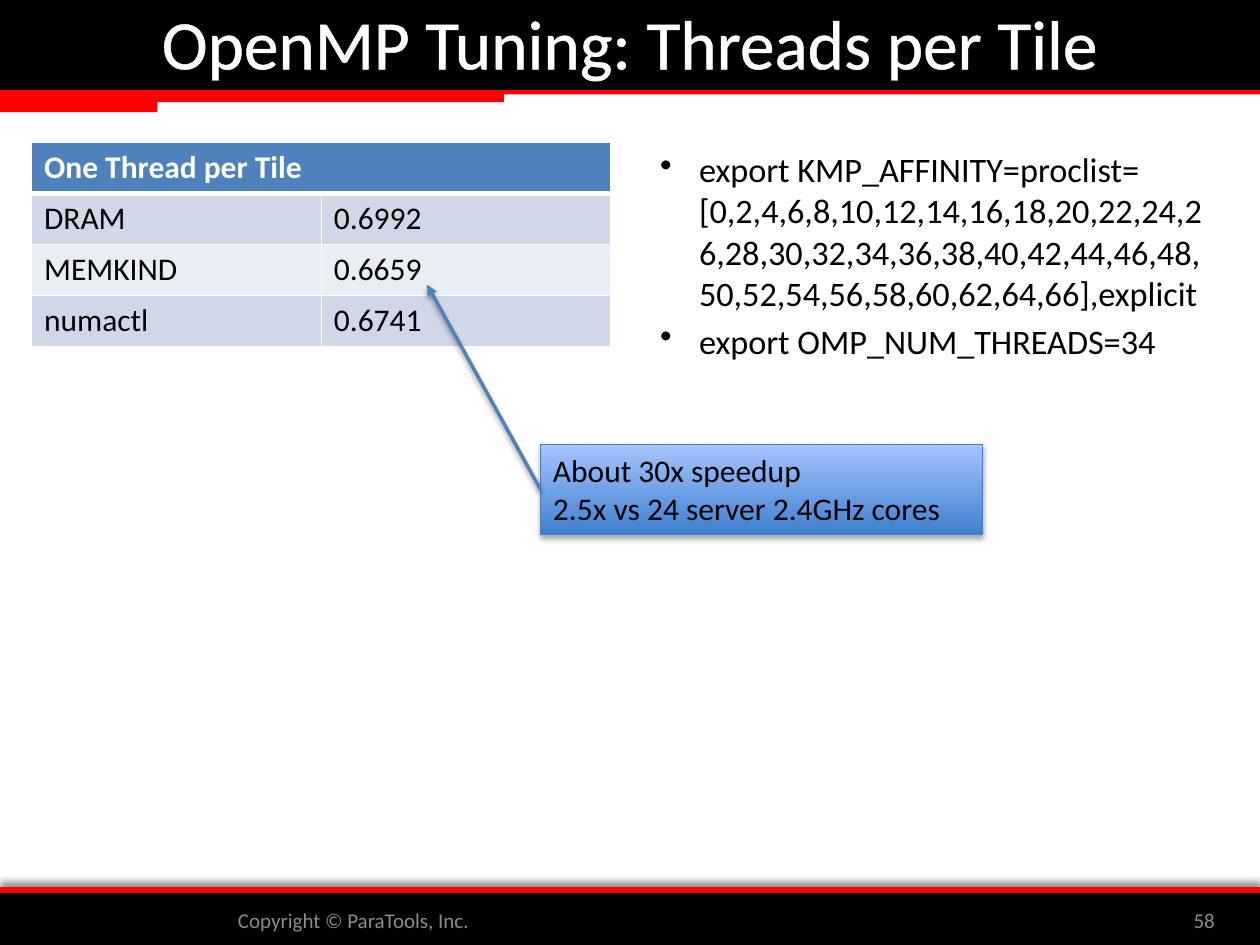
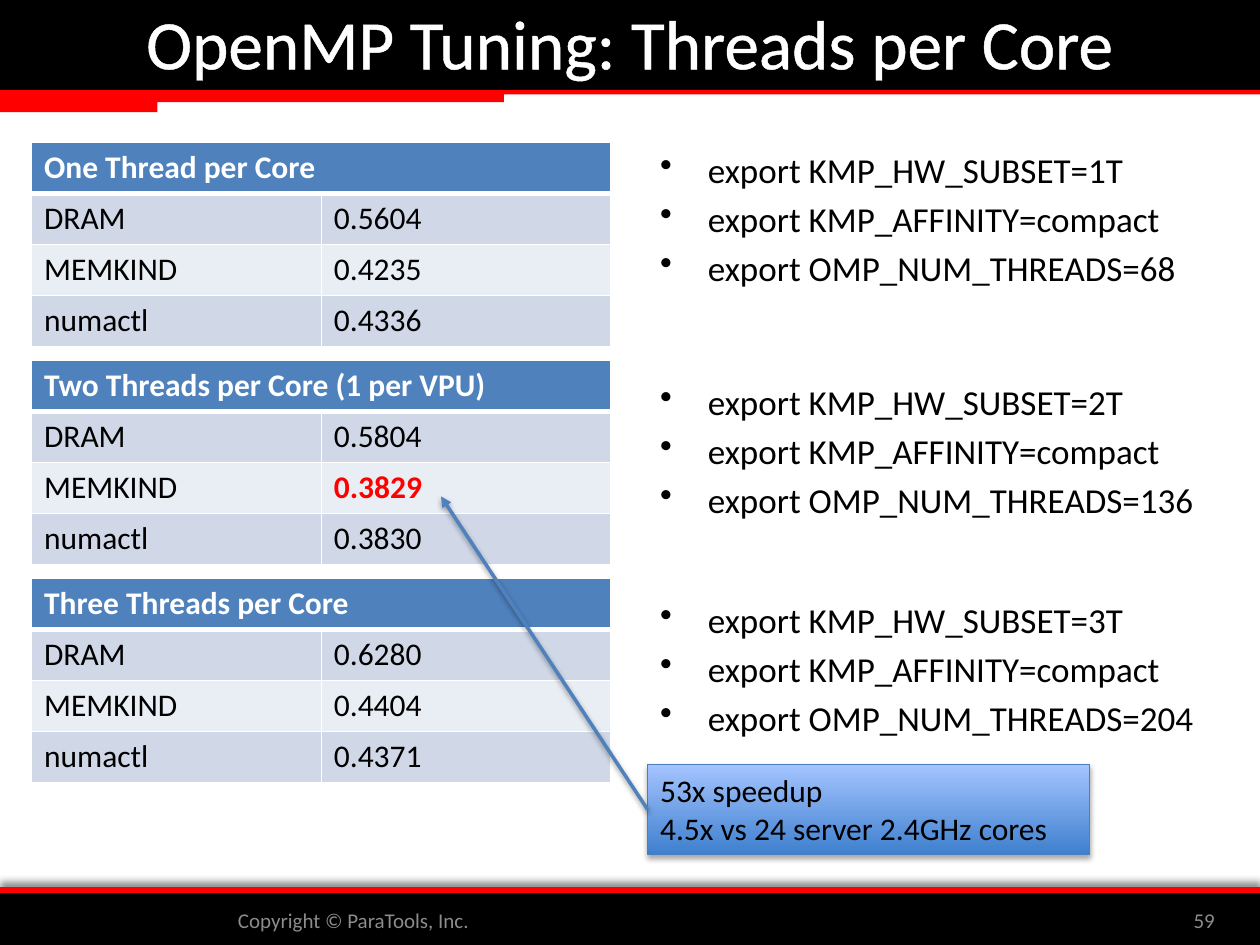
from dataclasses import dataclass

from lxml import etree
from pptx import Presentation
from pptx import util as u
from pptx.dml.color import RGBColor
from pptx.enum import shapes, text
from pptx.oxml.ns import qn

PX = 9144


@dataclass(frozen=True)
class Theme:
    font: str = "Calibri"
    black: str = "000000"
    white: str = "FFFFFF"
    red: str = "FF0000"
    gray: str = "8C8C8C"
    blue: str = "4F81BD"
    edge: str = "4B7EBC"
    gradient: tuple = ("3F80CE", "A4C4FF")
    stripes: tuple = ("D0D8E8", "E9EDF4")
    title: float = 39.6
    body: float = 20
    label: float = 18
    footer: float = 12


def px(*values):
    return [u.Emu(v * PX) for v in values]


def rgb(color):
    return RGBColor.from_string(color)


def add(parent, tag, **attrs):
    return etree.SubElement(parent, qn(tag), {k: str(v) for k, v in attrs.items()})


def apply(target, **values):
    for name, value in values.items():
        setattr(target, name, value)


def solid_line(parent, tag, color, points):
    ln = add(parent, tag, w=int(u.Pt(points)))
    add(add(ln, "a:solidFill"), "a:srgbClr", val=color)
    return ln


def shadow(effects, alpha, blur, dist, angle):
    outer = add(effects, "a:outerShdw", blurRad=int(u.Pt(blur)), dist=int(u.Pt(dist)),
                dir=angle * 60000, rotWithShape=0)
    add(add(outer, "a:srgbClr", val="000000"), "a:alpha", val=alpha * 1000)


class Deck:
    def __init__(self, theme):
        self.theme = theme
        self.prs = Presentation()
        self.prs.slide_width, self.prs.slide_height = px(1000, 750)
        self.layout = self.prs.slide_layouts[5]
        self.slide = None

    def new_slide(self, title, number):
        first = self.slide is None
        self.slide = self.prs.slides.add_slide(self.layout)
        if first:
            self.bands()
        self.title(title)
        gray = dict(size=self.theme.footer, color=self.theme.gray)
        self.text((179, 710, 674, 40), ["Copyright © ParaTools, Inc."], **gray)
        self.text((875, 710, 99, 40), [number], align=text.PP_ALIGN.RIGHT, **gray)

    def bands(self):
        t = self.theme
        bands = [
            self.rect((0, 704, 1000, 11), t.red, glow=(43, 4, 3, 270)),
            self.rect((0, 710, 1000, 40), t.black, (t.black, 2)),
            self.rect((0, 64, 1000, 11), t.red),
            self.rect((0, 56, 125, 33), t.red),
            self.rect((0, 59, 400, 22), t.red),
            self.rect((0, 0, 1000, 70), t.black, (t.black, 2)),
        ]
        for sp in bands:
            self.layout.shapes.element.append(sp.element)

    def font(self, p, size, color, bold=False):
        for r in p.runs:
            apply(r.font, name=self.theme.font, size=u.Pt(size), bold=bold)
            r.font.color.rgb = rgb(color)

    def title(self, words):
        t = self.theme
        sp = self.slide.shapes.title
        apply(sp, **dict(zip(("left", "top", "width", "height"), px(0, -2, 1000, 70))))
        tf = sp.text_frame
        tf.text = words
        tf.vertical_anchor = text.MSO_ANCHOR.MIDDLE
        p = tf.paragraphs[0]
        p.alignment = text.PP_ALIGN.CENTER
        self.font(p, t.title, t.white)
        r_pr = p.runs[0].font._element
        r_pr.insert(0, solid_line(r_pr, "a:ln", t.white, 1.45))

    def fill_text(self, tf, lines, size, color, align=text.PP_ALIGN.LEFT):
        tf.text = "\n".join(lines)
        for p in tf.paragraphs:
            p.alignment = align
            self.font(p, size, color)

    def text(self, box, lines, size, color, align=text.PP_ALIGN.LEFT):
        tf = self.slide.shapes.add_textbox(*px(*box)).text_frame
        apply(tf, word_wrap=True, vertical_anchor=text.MSO_ANCHOR.MIDDLE)
        self.fill_text(tf, lines, size, color, align)

    def bullets(self, top, lines, size=None, indent=38):
        size = size or self.theme.body
        tf = self.slide.shapes.add_textbox(*px(514, top, 460, 162)).text_frame
        tf.word_wrap = True
        for i, line in enumerate(lines):
            p = tf.add_paragraph() if i else tf.paragraphs[0]
            p.text = line
            if i:
                p.space_before = u.Pt(4)
            p_pr = p._p.get_or_add_pPr()
            p_pr.set("marL", str(indent * PX))
            p_pr.set("indent", str(-indent * PX))
            add(p_pr, "a:buChar", char="•")
            self.font(p, size, self.theme.black)

    def rect(self, box, fill=None, line=None, glow=None):
        sp = self.slide.shapes.add_shape(shapes.MSO_SHAPE.RECTANGLE, *px(*box))
        sp.shadow.inherit = False
        if fill:
            sp.fill.solid()
            sp.fill.fore_color.rgb = rgb(fill)
        if line:
            sp.line.color.rgb = rgb(line[0])
            sp.line.width = u.Pt(line[1])
        else:
            sp.line.fill.background()
        if glow:
            shadow(sp.element.spPr.find(qn("a:effectLst")), *glow)
        return sp

    def callout(self, left, top, lines, target):
        t = self.theme
        sp = self.rect((left, top, 351, 71), line=(t.edge, 0.75), glow=(35, 3.1, 1.8, 90))
        sp.fill.gradient()
        sp.fill.gradient_angle = 90
        for stop, color in zip(sp.fill.gradient_stops, t.gradient):
            stop.color.rgb = rgb(color)
        apply(sp.text_frame, word_wrap=True, vertical_anchor=text.MSO_ANCHOR.TOP,
              auto_size=text.MSO_AUTO_SIZE.SHAPE_TO_FIT_TEXT)
        self.fill_text(sp.text_frame, lines, t.label, t.black)
        self.arrow(sp, target)

    def arrow(self, source, target):
        cx = self.slide.shapes.add_connector(
            shapes.MSO_CONNECTOR.STRAIGHT, source.left, source.top, *px(*target))
        cx.begin_connect(source, 1)
        cx.line.color.rgb = rgb(self.theme.blue)
        cx.line.width = u.Pt(2)
        sp_pr = cx.element.spPr
        add(sp_pr.find(qn("a:ln")), "a:tailEnd", type="triangle")
        shadow(add(sp_pr, "a:effectLst"), 38, 3.1, 1.6, 90)

    def table(self, top, heading, timings, best=None):
        t = self.theme
        rows = [(heading, "")] + list(zip(("DRAM", "MEMKIND", "numactl"), timings))
        tbl = self.slide.shapes.add_table(len(rows), 2, *px(25, top, 460, 162)).table
        tbl.cell(0, 0).merge(tbl.cell(0, 1))
        for i, row in enumerate(rows):
            for j, value in enumerate(row):
                color = t.black if i else t.white
                if value == best:
                    color = t.red
                fill = t.stripes[(i - 1) % 2] if i else t.blue
                self.cell(tbl.cell(i, j), value, i, fill, color, i == 0 or value == best)

    def cell(self, cell, value, row, fill, color, bold):
        cell.text = value
        cell.fill.solid()
        cell.fill.fore_color.rgb = rgb(fill)
        self.font(cell.text_frame.paragraphs[0], self.theme.label, color, bold)
        tc_pr = cell._tc.get_or_add_tcPr()
        widths = {"L": 1, "R": 1, "T": 3 if row == 1 else 1, "B": 1 if row else 3}
        for i, (side, width) in enumerate(widths.items()):
            tc_pr.insert(i, solid_line(tc_pr, f"a:ln{side}", self.theme.white, width))


def main():
    deck = Deck(Theme())

    deck.new_slide("OpenMP Tuning: Threads per Tile", "58")
    deck.table(113, "One Thread per Tile", ("0.6992", "0.6659", "0.6741"))
    cores = ",".join(str(core) for core in range(0, 67, 2))
    deck.bullets(113, [f"export KMP_AFFINITY=proclist=\v[{cores}],explicit",
                       "export OMP_NUM_THREADS=34"], size=19.6, indent=31)
    deck.callout(429, 353, ["About 30x speedup", "2.5x vs 24 server 2.4GHz cores"],
                 (339, 226))

    deck.new_slide("OpenMP Tuning: Threads per Core", "59")
    runs = [
        ("One Thread per Core", ("0.5604", "0.4235", "0.4336"), 113),
        ("Two Threads per Core (1 per VPU)", ("0.5804", "0.3829", "0.3830"), 297),
        ("Three Threads per Core", ("0.6280", "0.4404", "0.4371"), 470),
    ]
    for i, (heading, timings, bullets_top) in enumerate(runs):
        threads = i + 1
        deck.table(113 + 173 * i, heading, timings, best="0.3829")
        deck.bullets(bullets_top, [f"export KMP_HW_SUBSET={threads}T",
                                   "export KMP_AFFINITY=compact",
                                   f"export OMP_NUM_THREADS={68 * threads}"])
    deck.callout(514, 607, ["53x speedup", "4.5x vs 24 server 2.4GHz cores"], (350, 394))

    deck.prs.save("out.pptx")


if __name__ == "__main__":
    main()
